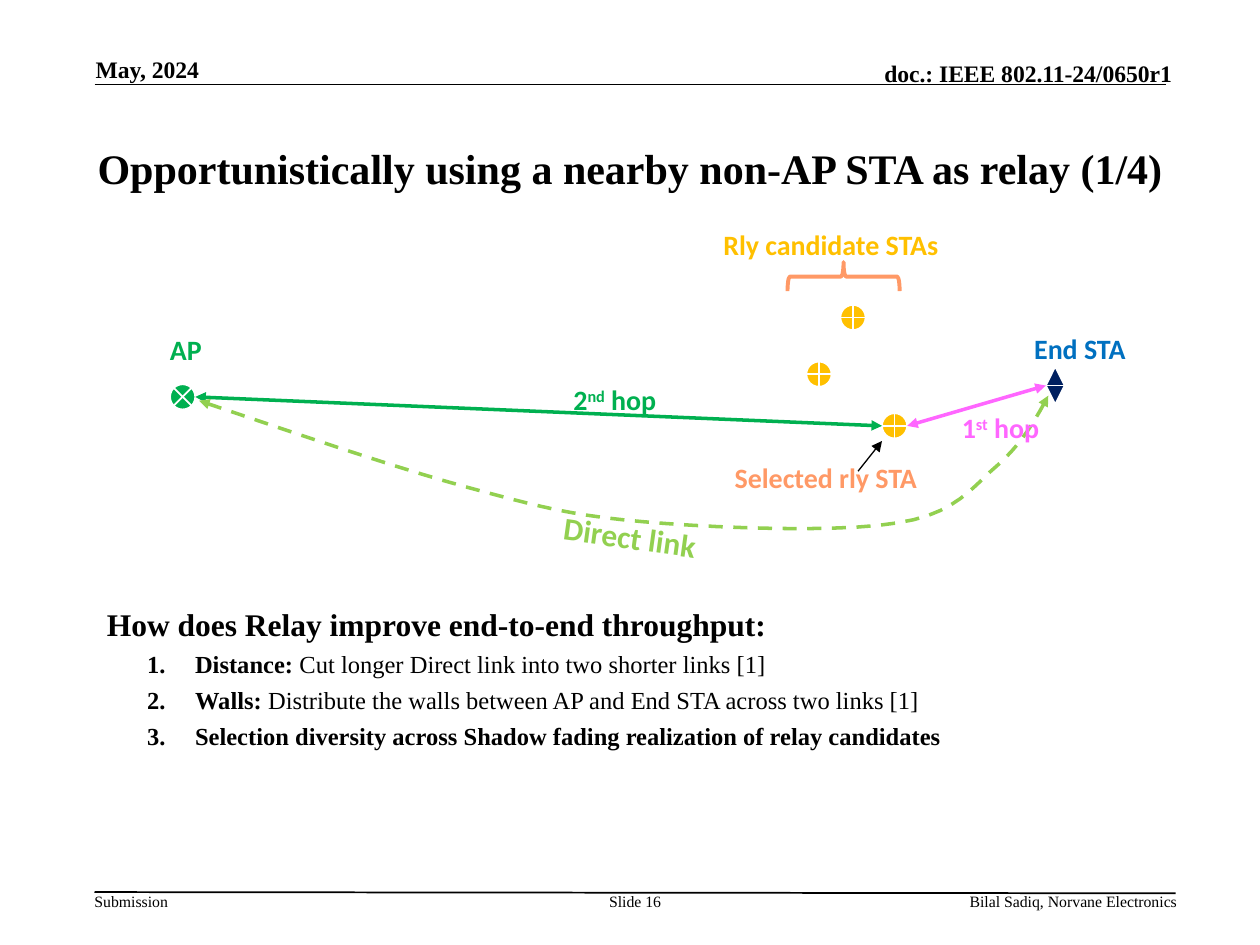
from lxml import etree
from pptx import Presentation
from pptx.dml.color import RGBColor
from pptx.enum.dml import MSO_LINE
from pptx.enum.shapes import MSO_CONNECTOR, MSO_SHAPE
from pptx.enum.text import MSO_ANCHOR, MSO_AUTO_SIZE, PP_ALIGN
from pptx.oxml.ns import qn
from pptx.util import Inches, Pt

LEFT, CENTER, RIGHT, JUSTIFY = PP_ALIGN.LEFT, PP_ALIGN.CENTER, PP_ALIGN.RIGHT, PP_ALIGN.JUSTIFY
TOP, MIDDLE, BOTTOM = MSO_ANCHOR.TOP, MSO_ANCHOR.MIDDLE, MSO_ANCHOR.BOTTOM
DASH = MSO_LINE.DASH
SUMMING = MSO_SHAPE.FLOWCHART_SUMMING_JUNCTION
OR, SORT = MSO_SHAPE.FLOWCHART_OR, MSO_SHAPE.FLOWCHART_SORT
SERIF, SANS = "Times New Roman", "Calibri"
BLACK, WHITE, GREEN, AMBER = "000000", "FFFFFF", "00B050", "FFC000"
ORANGE, PINK, LIME, BLUE, NAVY = "FF9966", "FF66FF", "92D050", "0070C0", "002060"


def style_text(font, name, size, color, bold):
    font.name, font.size, font.bold = name, Pt(size), bold
    font.color.rgb = RGBColor.from_string(color)


def style_line(line, color, width, ends=()):
    line.color.rgb = RGBColor.from_string(color)
    line.width = Pt(width)
    ln = line._get_or_add_ln()
    for end in ends:
        etree.SubElement(ln, qn(f"a:{end}"), type="triangle")


prs = Presentation()
prs.slide_width, prs.slide_height = Inches(10), Inches(7.5)
slide = prs.slides.add_slide(prs.slide_layouts[5])
shapes = slide.shapes

title = shapes.title
title.left, title.top, title.width, title.height = map(Inches, (0.25, 0.75, 9.5, 1.16))
title.text_frame.text = "Opportunistically using a nearby non-AP STA as relay (1/4)"
title.text_frame.auto_size = MSO_AUTO_SIZE.NONE
title.text_frame.vertical_anchor = MIDDLE
title.text_frame.paragraphs[0].alignment = CENTER
style_text(title.text_frame.paragraphs[0].runs[0].font, SERIF, 24, BLACK, True)

margin_texts = [
    ("May, 2024", 0.76, 0.36, 2.05, 0.3, 13.5, True, LEFT, BOTTOM),
    ("doc.: IEEE 802.11-24/0650r1", 5.47, 0.39, 3.83, 0.3, 13.5, True, RIGHT, BOTTOM),
    ("Submission", 0.75, 7.08, 0.8, 0.15, 9, False, LEFT, TOP),
    ("Slide 16", 4.75, 7.08, 0.58, 0.4, 9, False, CENTER, TOP),
    ("Bilal Sadiq, Norvane Electronics", 5.86, 7.08, 3.48, 0.2, 9, False, RIGHT, TOP),
]
for text, x, y, w, h, size, bold, align, anchor in margin_texts:
    frame = shapes.add_textbox(Inches(x), Inches(y), Inches(w), Inches(h)).text_frame
    frame.margin_left = frame.margin_right = frame.margin_top = frame.margin_bottom = 0
    frame.word_wrap, frame.vertical_anchor = True, anchor
    frame.text = text
    frame.paragraphs[0].alignment = align
    style_text(frame.paragraphs[0].runs[0].font, SERIF, size, BLACK, bold)

benefits = [
    [("How does Relay improve end-to-end throughput:", True)],
    [("Distance:", True), (" Cut longer Direct link into two shorter links [1]", False)],
    [("Walls: ", True), ("Distribute the walls between AP and End STA across two links [1]", False)],
    [("Selection diversity across Shadow fading realization of relay candidates", True)],
]
body = shapes.add_textbox(Inches(0.75), Inches(4.75), Inches(8.5), Inches(1.83)).text_frame
body.word_wrap = True
for index, parts in enumerate(benefits):
    paragraph = body.add_paragraph() if index else body.paragraphs[0]
    paragraph.alignment = JUSTIFY
    if index:
        paragraph.level = 1
        paragraph.space_before = Pt(3.8)
        properties = paragraph._p.get_or_add_pPr()
        properties.set("marL", str(Inches(0.7)))
        properties.set("indent", str(Inches(-0.38)))
        etree.SubElement(properties, qn("a:buAutoNum"), type="arabicPeriod")
    for text, bold in parts:
        run = paragraph.add_run()
        run.text = text
        style_text(run.font, SERIF, 14 if index else 18, BLACK, bold)

stations = [
    (SUMMING, 1.35, 3.05, 0.2, 0.2, GREEN),
    (OR, 6.67, 2.42, 0.2, 0.2, AMBER),
    (OR, 6.4, 2.87, 0.2, 0.2, AMBER),
    (OR, 7, 3.28, 0.2, 0.2, AMBER),
    (SORT, 8.3, 2.91, 0.15, 0.3, NAVY),
]
for kind, x, y, w, h, color in stations:
    station = shapes.add_shape(kind, Inches(x), Inches(y), Inches(w), Inches(h))
    station.shadow.inherit = False
    station.fill.solid()
    station.fill.fore_color.rgb = RGBColor.from_string(color)
    style_line(station.line, WHITE, 1)

brace = shapes.add_shape(MSO_SHAPE.RIGHT_BRACE, Inches(6.58), Inches(1.75), Inches(0.23), Inches(0.89))
brace.rotation = 270
brace.shadow.inherit = False
brace.fill.background()
style_line(brace.line, ORANGE, 2.25)

both_ends = ("headEnd", "tailEnd")
links = [
    (0.75, 0.67, 9.25, 0.67, BLACK, 1, ()),
    (0.75, 7.08, 9.33, 7.09, BLACK, 1, ()),
    (8.3, 3.06, 7.2, 3.38, PINK, 2, both_ends),
    (6.81, 3.74, 7, 3.5, BLACK, 0.75, ("tailEnd",)),
    (1.55, 3.15, 7, 3.38, GREEN, 2, both_ends),
]
for x1, y1, x2, y2, color, width, ends in links:
    link = shapes.add_connector(MSO_CONNECTOR.STRAIGHT, Inches(x1), Inches(y1), Inches(x2), Inches(y2))
    style_line(link.line, color, width, ends)
    etree.SubElement(link._element.spPr, qn("a:effectLst"))

start = (8.32, 3.14)
curves = [
    ((8.22, 3.33), (8.11, 3.52), (7.92, 3.69)),
    ((7.72, 3.86), (7.59, 4.08), (7.12, 4.15)),
    ((6.65, 4.23), (5.67, 4.19), (5.1, 4.14)),
    ((4.54, 4.09), (4.31, 4.03), (3.72, 3.87)),
    ((3.13, 3.71), (2.35, 3.44), (1.58, 3.18)),
]
steps = 10
points = []
p0 = start
for p1, p2, p3 in curves:
    for step in range(1, steps + 1):
        t = step / steps
        points.append(tuple(
            Inches((1 - t) ** 3 * a + 3 * (1 - t) ** 2 * t * b + 3 * (1 - t) * t ** 2 * c + t ** 3 * d)
            for a, b, c, d in zip(p0, p1, p2, p3)))
    p0 = p3
builder = shapes.build_freeform(Inches(start[0]), Inches(start[1]))
builder.add_line_segments(points, close=False)
direct_link = builder.convert_to_shape()
direct_link.shadow.inherit = False
direct_link.fill.background()
direct_link.line.dash_style = DASH
style_line(direct_link.line, LIME, 2, both_ends)

labels = [
    (("Rly candidate STAs",), 5.43, 1.76, 2.33, 0.37, 16, AMBER, CENTER, 0),
    (("AP",), 1.25, 2.59, 0.59, 0.37, 16, GREEN, LEFT, 0),
    (("End STA",), 8.11, 2.58, 0.97, 0.37, 16, BLUE, LEFT, 0),
    (("1", "st", " hop"), 7.29, 3.21, 1.3, 0.37, 16, PINK, CENTER, 0),
    (("Selected rly STA",), 5.64, 3.61, 1.83, 0.37, 16, ORANGE, CENTER, 0),
    (("2", "nd", " hop"), 4.13, 2.99, 1.5, 0.37, 16, GREEN, CENTER, 0),
    (("Direct link",), 4.25, 4.06, 1.5, 0.4, 18, LIME, CENTER, 7.9),
]
for parts, x, y, w, h, size, color, align, angle in labels:
    label = shapes.add_textbox(Inches(x), Inches(y), Inches(w), Inches(h))
    label.rotation = angle
    label.text_frame.word_wrap = True
    paragraph = label.text_frame.paragraphs[0]
    paragraph.alignment = align
    for text in parts:
        run = paragraph.add_run()
        run.text = text
        style_text(run.font, SANS, size, color, True)
        if text in ("st", "nd"):
            run.font._element.set("baseline", "30000")

prs.save("out.pptx")
